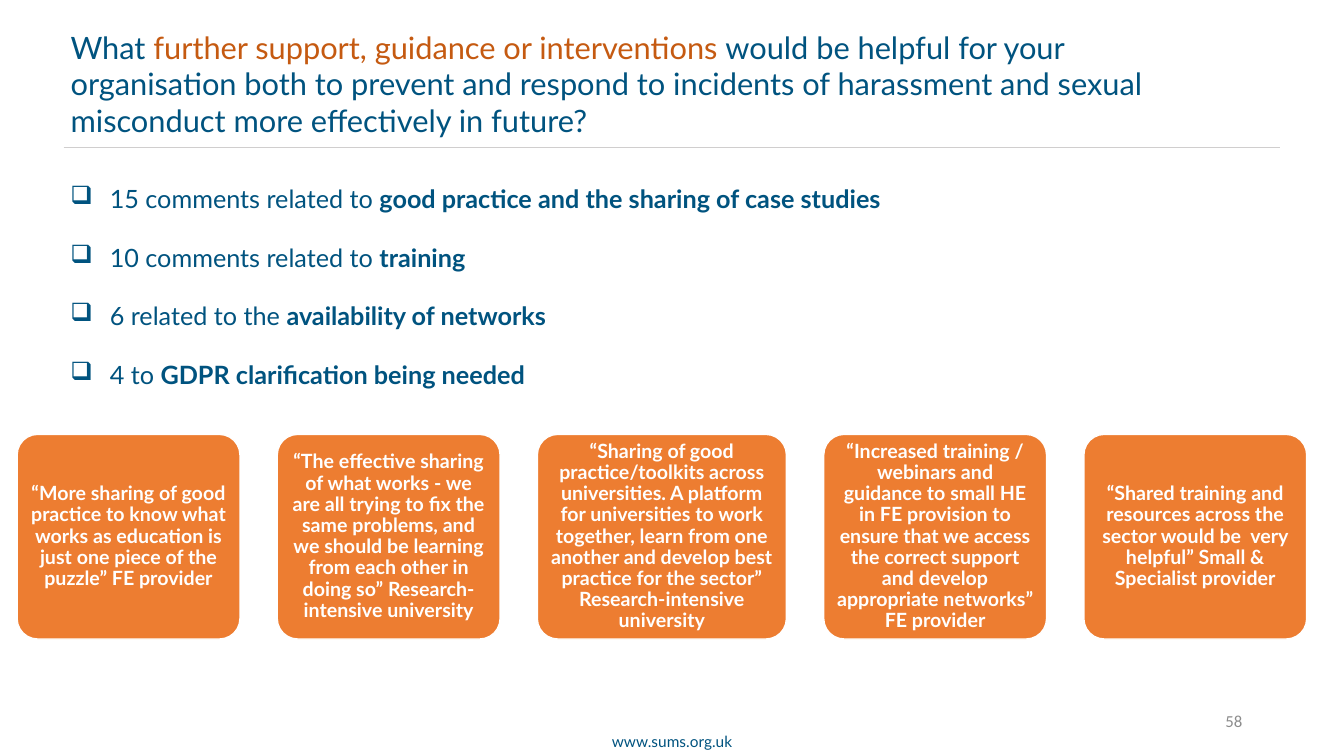
from dataclasses import dataclass

import pptx
import pptx.dml.color
import pptx.enum.shapes
import pptx.enum.text
import pptx.oxml
import pptx.oxml.ns
import pptx.util
from pptx.util import Inches

ALIGN = pptx.enum.text.PP_ALIGN
ANCHOR = pptx.enum.text.MSO_ANCHOR


@dataclass(frozen=True)
class Theme:
    font: str = "Lato"
    number_font: str = "Calibri"
    blue: str = "00537F"
    accent: str = "C55A11"
    card: str = "ED7D31"
    white: str = "FFFFFF"
    rule: str = "D0CECE"
    grey: str = "8C8C8C"
    title_size: int = 22
    list_size: int = 18
    quote_size: int = 14
    number_size: int = 12
    footer_size: int = 11


theme = Theme()


def color(value):
    return pptx.dml.color.RGBColor.from_string(value)


def add_run(paragraph, text, size, text_color, bold=False, name=theme.font):
    run = paragraph.add_run()
    run.text = text
    run.font.name = name
    run.font.size = pptx.util.Pt(size)
    run.font.bold = bold
    run.font.color.rgb = color(text_color)


presentation = pptx.Presentation()
presentation.slide_width = Inches(13.33)
presentation.slide_height = Inches(7.5)
slide = presentation.slides.add_slide(presentation.slide_layouts.get_by_name("Title Only"))

# Title and the rule below it
title = slide.shapes.title
title.left, title.top = Inches(0.6), Inches(0.23)
title.width, title.height = Inches(11.23), Inches(1.2)
title.text_frame.auto_size = pptx.enum.text.MSO_AUTO_SIZE.NONE
title.text_frame.vertical_anchor = ANCHOR.TOP
paragraph = title.text_frame.paragraphs[0]
paragraph.alignment = ALIGN.LEFT
for text, text_color in (
    ("What ", theme.blue),
    ("further support, guidance or interventions ", theme.accent),
    ("would be helpful for your organisation both to prevent and respond to incidents "
     "of harassment and sexual misconduct more effectively in future?", theme.blue),
):
    add_run(paragraph, text, theme.title_size, text_color)

rule = slide.shapes.add_connector(
    pptx.enum.shapes.MSO_CONNECTOR.STRAIGHT,
    Inches(0.63), Inches(1.46), Inches(12.7), Inches(1.46))
rule.line.color.rgb = color(theme.rule)
rule.line.width = pptx.util.Pt(0.5)
rule._element.spPr.append(pptx.oxml.parse_xml(
    f"<a:effectLst {pptx.oxml.ns.nsdecls('a')}/>"))

# Comment counts
findings = (
    ("15 comments related to ", "good practice and the sharing of case studies"),
    ("10 comments related to ", "training"),
    ("6 related to the ", "availability of networks"),
    ("4 to ", "GDPR clarification being needed"),
)
findings_box = slide.shapes.add_textbox(Inches(0.6), Inches(1.71), Inches(12.22), Inches(2.11))
text_frame = findings_box.text_frame
text_frame.word_wrap = True
for index, (count, topic) in enumerate(findings):
    paragraph = text_frame.add_paragraph() if index else text_frame.paragraphs[0]
    paragraph.line_spacing = 1.2
    paragraph.space_before = pptx.util.Pt(10 if index else 0)
    paragraph.space_after = pptx.util.Pt(6)
    properties = paragraph._p.get_or_add_pPr()
    properties.set("marL", str(Inches(0.39)))
    properties.set("indent", str(-Inches(0.39)))
    properties.append(pptx.oxml.parse_xml(
        f"<a:buChar {pptx.oxml.ns.nsdecls('a')} char='❑'/>"))
    add_run(paragraph, count, theme.list_size, theme.blue)
    add_run(paragraph, topic, theme.list_size, theme.blue, bold=True)

# Quote cards, evenly spaced
quotes = (
    (2.21, "“More sharing of good practice to know what works as education is just one "
           "piece of the puzzle” FE provider"),
    (2.21, "“The effective sharing of what works - we are all trying to fix the same "
           "problems, and we should be learning from each other in doing so” "
           "Research-intensive university"),
    (2.47, "“Sharing of good practice/toolkits across universities. A platform for "
           "universities to work together, learn from one another and develop best "
           "practice for the sector” Research-intensive university"),
    (2.21, "“Increased training / webinars and guidance to small HE in FE provision to "
           "ensure that we access the correct support and develop appropriate networks” "
           "FE provider"),
    (2.21, "“Shared training and resources across the sector would be  very helpful” "
           "Small & Specialist provider"),
)
card_gap = 0.37
card_left = 0.17
for card_width, quote in quotes:
    card = slide.shapes.add_shape(
        pptx.enum.shapes.MSO_SHAPE.ROUNDED_RECTANGLE,
        Inches(card_left), Inches(4.31), Inches(card_width), Inches(2.03))
    card.adjustments[0] = 0.1
    card.shadow.inherit = False
    card.fill.solid()
    card.fill.fore_color.rgb = color(theme.card)
    card.line.color.rgb = color(theme.white)
    card.line.width = pptx.util.Pt(1)
    text_frame = card.text_frame
    text_frame.word_wrap = True
    text_frame.vertical_anchor = ANCHOR.MIDDLE
    text_frame.margin_left = text_frame.margin_right = Inches(0.06)
    text_frame.margin_top = text_frame.margin_bottom = Inches(0.06)
    paragraph = text_frame.paragraphs[0]
    paragraph.alignment = ALIGN.CENTER
    paragraph.line_spacing = 0.9
    add_run(paragraph, quote, theme.quote_size, theme.white, bold=True)
    card_left += card_width + card_gap

# Footer
footer = slide.shapes.add_textbox(Inches(5.94), Inches(7.21), Inches(1.45), Inches(0.29))
footer.text_frame.word_wrap = True
paragraph = footer.text_frame.paragraphs[0]
paragraph.alignment = ALIGN.CENTER
add_run(paragraph, "www.sums.org.uk", theme.footer_size, theme.blue)

page_number = slide.shapes.add_textbox(Inches(9.42), Inches(6.95), Inches(3), Inches(0.4))
page_number.text_frame.word_wrap = True
page_number.text_frame.vertical_anchor = ANCHOR.MIDDLE
paragraph = page_number.text_frame.paragraphs[0]
paragraph.alignment = ALIGN.RIGHT
add_run(paragraph, "58", theme.number_size, theme.grey, name=theme.number_font)

presentation.save("out.pptx")
